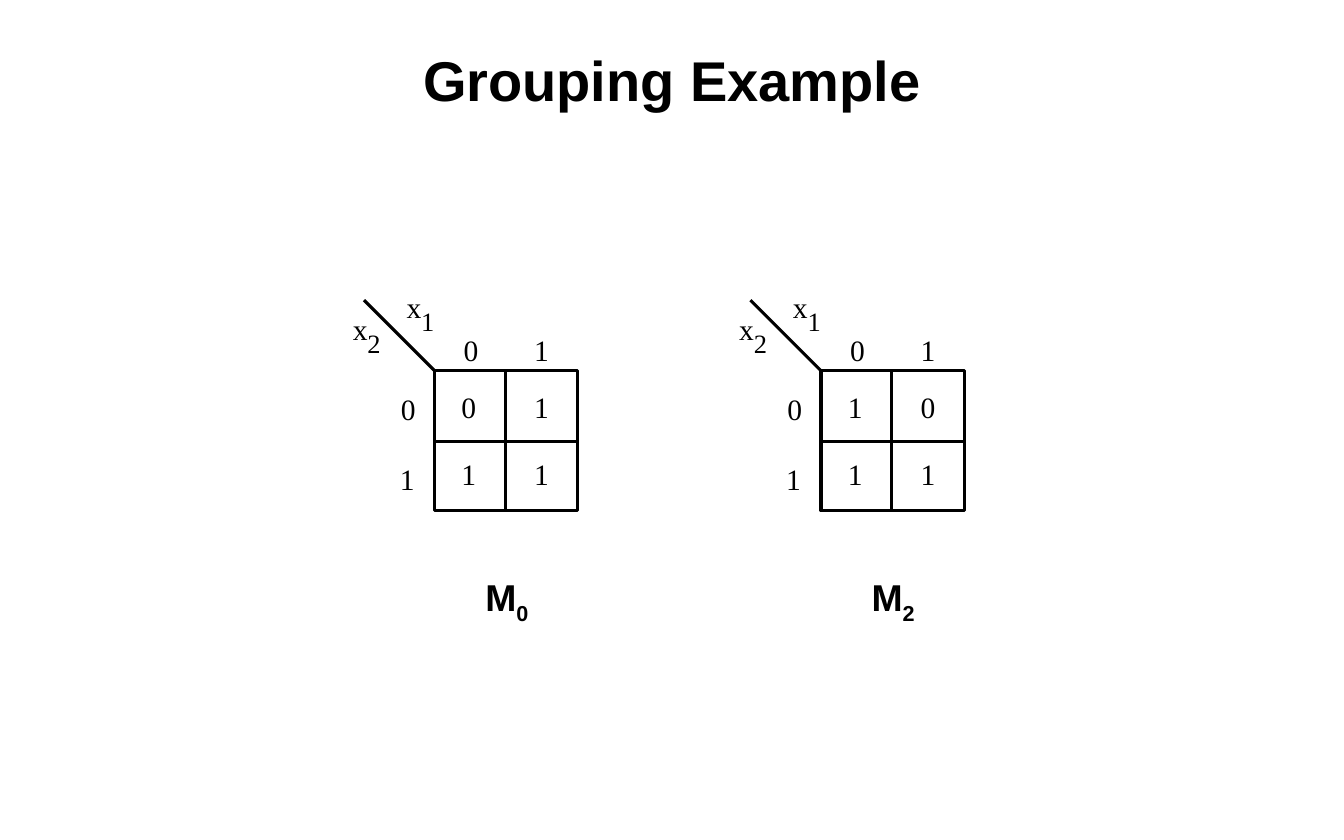
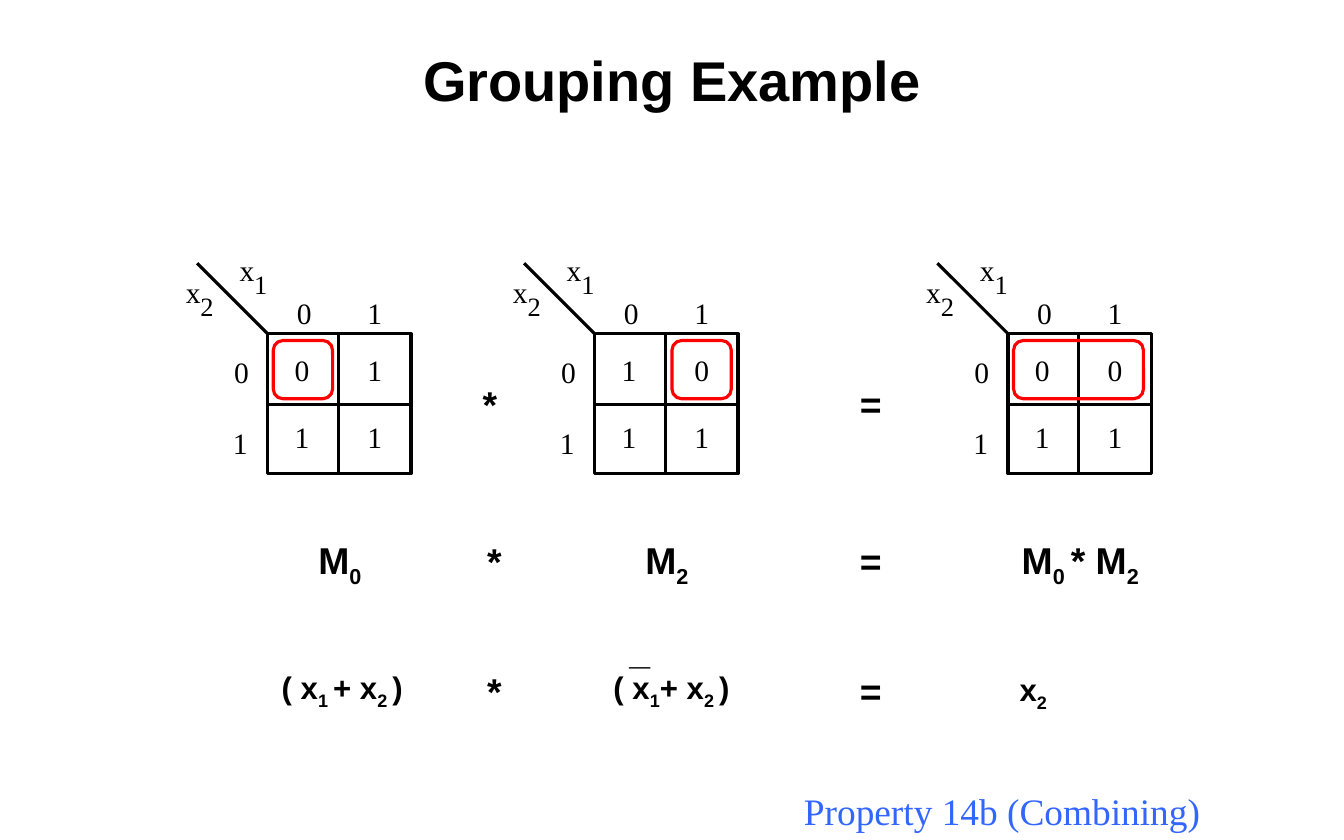
from lxml.etree import SubElement
from pptx import Presentation
from pptx.dml.color import RGBColor
from pptx.enum.shapes import MSO_CONNECTOR, MSO_SHAPE
from pptx.enum.text import MSO_ANCHOR, MSO_AUTO_SIZE, PP_ALIGN
from pptx.oxml.ns import qn
from pptx.util import Inches, Pt

BLACK, WHITE, RED, BLUE = "000000", "FFFFFF", "FF0000", "3366FF"
SANS, SERIF = "Arial", "Times New Roman"
LINE_WIDTH = 2

# Karnaugh map measures, in inches
MAP_WIDTH, MAP_HEIGHT = 1.28, 1.25
CELL = 0.63
RING_WIDTH, RING_HEIGHT = 0.53, 0.52

# Formula boxes, in inches
FORMULA_WIDTH, OPERATOR_WIDTH = 1.69, 0.29


def color(hex_code):
    return RGBColor.from_string(hex_code)


def style_span(span, size, font, ink, bold=False, subscript=False):
    span.font.size = Pt(size)
    span.font.name = font
    span.font.bold = bold
    span.font.color.rgb = color(ink)
    if subscript:
        span.font._element.set("baseline", "-25000")


def add_label(page, text, left, top, width, height, size=19, ink=BLACK, inset=0):
    """Plain serif text that does not wrap."""
    box = page.shapes.add_textbox(Inches(left), Inches(top), Inches(width), Inches(height))
    frame = box.text_frame
    frame.word_wrap = False
    frame.auto_size = MSO_AUTO_SIZE.SHAPE_TO_FIT_TEXT
    if not inset:
        frame.margin_left = frame.margin_right = 0
        frame.margin_top = frame.margin_bottom = 0
    frame.text = text
    style_span(frame.paragraphs[0].runs[0], size, SERIF, ink)


def add_formula(page, pieces, left, top, width=FORMULA_WIDTH, size=24, align=PP_ALIGN.CENTER):
    """Bold text in which every second piece is a subscript."""
    box = page.shapes.add_textbox(Inches(left), Inches(top), Inches(width), Inches(size * 0.02 + 0.03))
    frame = box.text_frame
    frame.word_wrap = True
    frame.auto_size = MSO_AUTO_SIZE.SHAPE_TO_FIT_TEXT
    para = frame.paragraphs[0]
    para.alignment = align
    for index, piece in enumerate(pieces):
        span = para.add_run()
        span.text = piece
        style_span(span, size, SANS, BLACK, bold=True, subscript=index % 2 == 1)


def add_operator(page, sign, left, top, width=OPERATOR_WIDTH):
    add_formula(page, [sign], left, top, width, align=PP_ALIGN.LEFT)


def add_outline(page, preset, left, top, width, height, ink, fill=None):
    shape = page.shapes.add_shape(preset, Inches(left), Inches(top), Inches(width), Inches(height))
    shape.shadow.inherit = False
    if fill:
        shape.fill.solid()
        shape.fill.fore_color.rgb = color(fill)
    else:
        shape.fill.background()
    shape.line.color.rgb = color(ink)
    shape.line.width = Pt(LINE_WIDTH)


def add_line(page, x1, y1, x2, y2):
    line = page.shapes.add_connector(
        MSO_CONNECTOR.STRAIGHT, Inches(x1), Inches(y1), Inches(x2), Inches(y2))
    line.line.color.rgb = color(BLACK)
    line.line.width = Pt(LINE_WIDTH)
    SubElement(line._element.spPr, qn("a:effectLst"))


def add_variable(page, index, left, top):
    add_label(page, "x", left, top, 0.2, 0.32)
    add_label(page, index, left + 0.13, top + 0.14, 0.18, 0.29, size=17)


def add_map(page, left, top, rows):
    """Two-variable Karnaugh map; left and top are the corner of its grid."""
    # Grid and the diagonal between the variables
    add_outline(page, MSO_SHAPE.RECTANGLE, left, top, MAP_WIDTH, MAP_HEIGHT, BLACK, WHITE)
    add_line(page, left, top + CELL, left + MAP_WIDTH, top + CELL)
    add_line(page, left + CELL, top, left + CELL, top + MAP_HEIGHT)
    add_line(page, left - CELL, top - CELL, left, top)
    add_variable(page, "2", left - 0.73, top - 0.53)
    add_variable(page, "1", left - 0.25, top - 0.73)

    # Row and column headings, then cell values
    for index, heading in enumerate("01"):
        add_label(page, heading, left - 0.3 - 0.01 * index, top + 0.18 + CELL * index, 0.2, 0.32)
        add_label(page, heading, left + 0.26 + CELL * index, top - 0.35, 0.2, 0.32)
    for row, values in enumerate(rows):
        for column, value in enumerate(values):
            add_label(page, value, left + 0.24 + 0.65 * column, top + 0.16 + 0.6 * row, 0.13, 0.32)


def add_ring(page, left, top, column, span=1):
    """Red ring around cells in the top row of the map at left, top."""
    add_outline(page, MSO_SHAPE.ROUNDED_RECTANGLE, left + 0.05 + 0.64 * column, top + 0.06,
                RING_WIDTH + CELL * (span - 1), RING_HEIGHT, RED)


def add_page(deck):
    page = deck.slides.add_slide(deck.slide_layouts[5])
    title = page.shapes.title
    title.left, title.top = Inches(0), Inches(0.33)
    title.width, title.height = Inches(12), Inches(0.75)
    frame = title.text_frame
    frame.text = "Grouping Example"
    frame.vertical_anchor = MSO_ANCHOR.MIDDLE
    frame.paragraphs[0].alignment = PP_ALIGN.CENTER
    style_span(frame.paragraphs[0].runs[0], 36, SANS, BLACK, bold=True)
    return page


def build_maxterm_page(deck):
    page = add_page(deck)
    for left, rows, index in [(3.88, ("01", "11"), "0"), (7.33, ("10", "11"), "2")]:
        add_map(page, left, 3.31, rows)
        add_formula(page, ["M", index], left - 0.2, 5.08)


def build_product_page(deck):
    page = add_page(deck)
    top = 2.98
    # Each column: grid left, cell values, ringed column and span, maxterms
    columns = [
        (2.39, ("01", "11"), 0, 1, ["M", "0"]),
        (5.31, ("10", "11"), 1, 1, ["M", "2"]),
        (9.0, ("00", "11"), 0, 2, ["M", "0 ", "* M", "2"]),
    ]
    for left, rows, ring_column, ring_span, maxterms in columns:
        add_map(page, left, top, rows)
        add_ring(page, left, top, ring_column, ring_span)
        add_formula(page, maxterms, left - 0.2, 4.75)

    # Operators between the columns
    for operator_top, star_left in [(3.35, 4.21), (4.76, 4.25), (5.92, 4.25)]:
        add_operator(page, "*", star_left, operator_top)
        add_operator(page, "=", 7.58, operator_top)

    # Algebraic form, with a bar over the complemented variable
    add_formula(page, ["( x", "1 ", "+ x", "2 ", ")"], 2.21, 5.92, size=20)
    add_formula(page, ["( x", "1", "+ x", "2 ", ")"], 5.15, 5.92, size=20)
    add_formula(page, ["x", "2"], 8.38, 5.94, size=20)
    add_operator(page, "_", 5.52, 5.55, width=0.35)

    add_label(page, "Property 14b (Combining)", 7.08, 6.99, 3.77, 0.5, size=24, ink=BLUE, inset=0.1)


def main():
    deck = Presentation()
    deck.slide_width, deck.slide_height = Inches(12), Inches(7.5)
    build_maxterm_page(deck)
    build_product_page(deck)
    deck.save("out.pptx")


if __name__ == "__main__":
    main()
